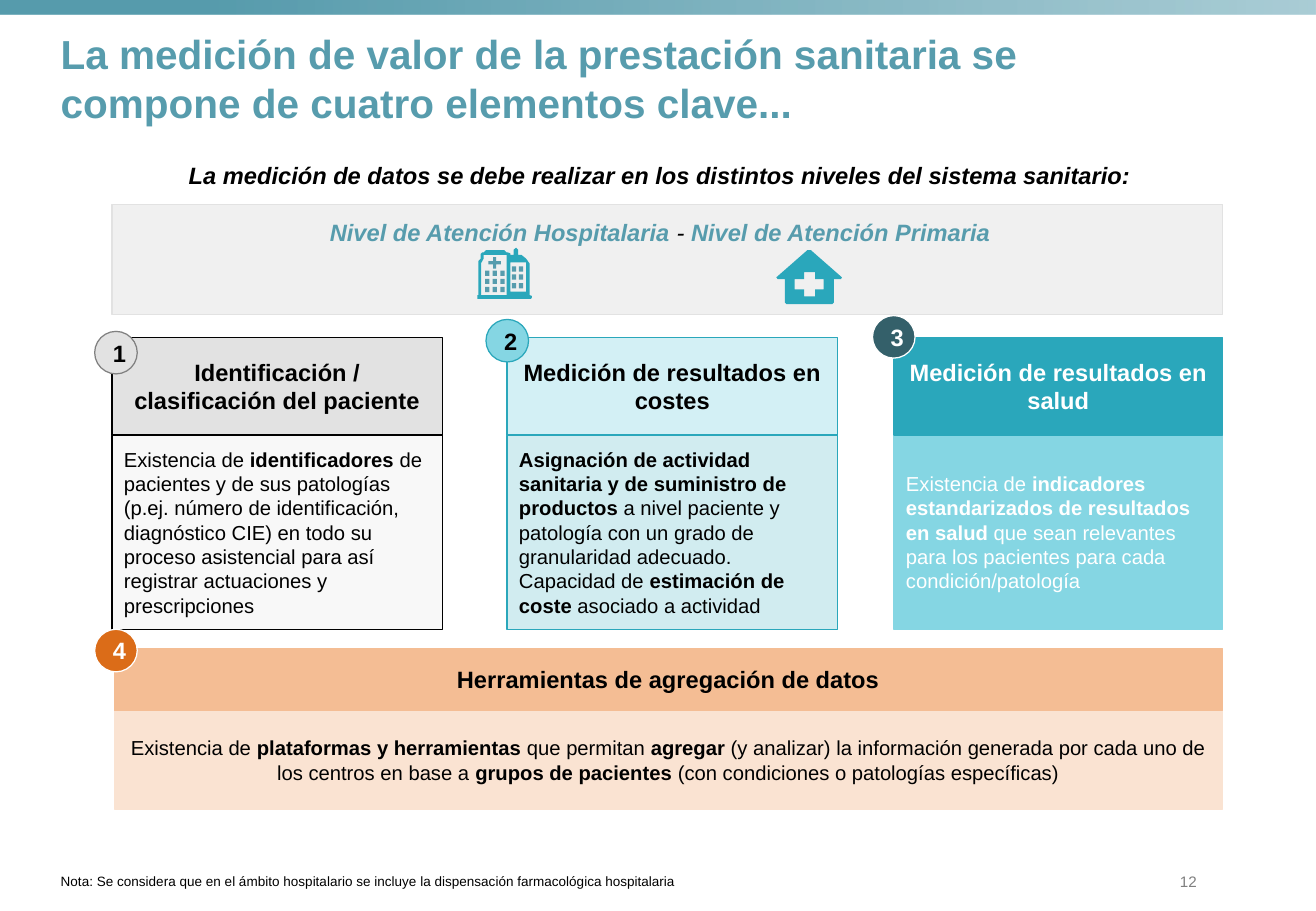
from lxml import etree
from pptx import Presentation
from pptx import util as u
from pptx.dml.color import RGBColor
from pptx.enum import shapes, text
from pptx.oxml.ns import qn

# Content: text between asterisks is bold
TITLE = "La medición de valor de la prestación sanitaria se compone de cuatro elementos clave..."
INTRO = "La medición de datos se debe realizar en los distintos niveles del sistema sanitario:"
LEVELS = ("Nivel de Atención Hospitalaria", " - ", "Nivel de Atención Primaria")
NOTE = "Nota: Se considera que en el ámbito hospitalario se incluye la dispensación farmacológica hospitalaria"
PAGE_NUMBER = "12"

BLACK, WHITE, GREY = "000000", "FFFFFF", "E2E2E2"
SLATE, TEAL, AQUA = "579CAD", "2AA7BB", "85D6E3"
LEFT, CENTER, RIGHT = text.PP_ALIGN.LEFT, text.PP_ALIGN.CENTER, text.PP_ALIGN.RIGHT
TOP, MIDDLE, BOTTOM = text.MSO_ANCHOR.TOP, text.MSO_ANCHOR.MIDDLE, text.MSO_ANCHOR.BOTTOM
RECT, CIRCLE = shapes.MSO_SHAPE.RECTANGLE, shapes.MSO_SHAPE.FLOWCHART_CONNECTOR

# Each card: place is left, top, width, head height, body height in cm;
# head and badge are fill, line, ink; body is fill, line, ink, opacity
CARDS = [
    dict(title="Identificación / clasificación del paciente",
         detail="Existencia de *identificadores* de pacientes y de sus patologías (p.ej. número de "
                "identificación, diagnóstico CIE) en todo su proceso asistencial para así registrar "
                "actuaciones y prescripciones",
         place=(2.34, 7.06, 6.91, 2.04, 4.06), align=LEFT, head=(GREY, BLACK, BLACK),
         body=(GREY, BLACK, BLACK, 21), badge=(GREY, "808080", BLACK), badge_at=(1.98, 6.93)),
    dict(title="Medición de resultados en costes",
         detail="*Asignación de actividad sanitaria y de suministro de productos *a nivel paciente y "
                "patología con un grado de granularidad adecuado. Capacidad de *estimación de coste *"
                "asociado a actividad",
         place=(10.6, 7.06, 6.91, 2.04, 4.06), align=LEFT, head=("D3F0F5", TEAL, BLACK),
         body=(TEAL, TEAL, BLACK, 21), badge=(AQUA, TEAL, BLACK), badge_at=(10.16, 6.68)),
    dict(title="Medición de resultados en salud",
         detail="Existencia de *indicadores estandarizados de resultados en salud* que sean relevantes "
                "para los pacientes para cada condición/patología",
         place=(18.69, 7.06, 6.87, 2.04, 4.06), align=LEFT, head=(TEAL, TEAL, WHITE),
         body=(AQUA, AQUA, WHITE, 100), badge=("34606A", WHITE, WHITE), badge_at=(18.24, 6.6)),
    dict(title="Herramientas de agregación de datos",
         detail="Existencia de *plataformas y herramientas* que permitan* agregar *(y analizar) la "
                "información generada por cada uno de los centros en base a *grupos de pacientes *"
                "(con condiciones o patologías específicas)",
         place=(2.39, 13.56, 23.16, 1.3, 2.06), align=CENTER, head=("F4BD94", "F4BD94", BLACK),
         body=("FAE3D2", "FAE3D2", BLACK, 100), badge=("DB6C18", WHITE, WHITE), badge_at=(1.98, 13.16)),
]

# Icons, in hundredths of a cm
HOUSE = [(1760, 580), (1695, 523), (1688, 523), (1623, 580), (1626, 584), (1641, 584), (1641, 633),
         (1644, 636), (1740, 636), (1743, 633), (1743, 584), (1758, 584)]
HOSPITAL = [(1112, 619), (1107, 617), (1107, 551), (1100, 541), (1090, 533), (1083, 533), (1083, 522),
            (1079, 518), (1074, 522), (1074, 533), (1067, 533), (1067, 530), (1062, 528), (1059, 528),
            (1054, 523), (1016, 523), (1011, 528), (1008, 528), (1005, 531), (1005, 541), (1000, 546),
            (1000, 617), (998, 617), (998, 625), (1110, 625), (1112, 622)]
LEFT_WING = [(1059, 617), (1006, 617), (1006, 550), (1011, 541), (1011, 533), (1059, 533)]
RIGHT_WING = [(1067, 549), (1100, 549), (1100, 610), (1067, 610)]
WINDOWS = [((1014, 1030, 1046), (566, 583, 600)), ((1070, 1085), (557, 574, 592))]

deck = Presentation()
deck.slide_width, deck.slide_height = u.Cm(27.51), u.Cm(19.05)
page = deck.slides.add_slide(deck.slide_layouts[6])


def color(value):
    return RGBColor.from_string(value)


def fade(node, percent):
    etree.SubElement(node, qn("a:alpha")).set("val", str(percent * 1000))


def paint(shape, fill, line=None, opacity=100):
    shape.shadow.inherit = False
    shape.fill.solid()
    shape.fill.fore_color.rgb = color(fill)
    if opacity < 100:
        fade(shape._element.spPr.find(qn("a:solidFill")).find(qn("a:srgbClr")), opacity)
    if line:
        shape.line.color.rgb = color(line)
        shape.line.width = u.Pt(0.75)
    else:
        shape.line.fill.background()


def add_box(kind, place, *colors):
    box = page.shapes.add_shape(kind, *map(u.Cm, place))
    paint(box, *colors)
    return box


def add_textbox(place):
    return page.shapes.add_textbox(*map(u.Cm, place))


def set_frame(box, anchor, inset_x, inset_y, wrap=True):
    frame_format = dict(word_wrap=wrap, vertical_anchor=anchor,
                        margin_left=u.Cm(inset_x), margin_right=u.Cm(inset_x),
                        margin_top=u.Cm(inset_y), margin_bottom=u.Cm(inset_y))
    for name, value in frame_format.items():
        setattr(box.text_frame, name, value)
    return box.text_frame.paragraphs[0]


def write(para, words, size, ink, align=LEFT, **style):
    para.alignment = align
    span = para.add_run()
    span.text = words
    span.font.color.rgb = color(ink)
    for name, value in dict(name="Arial", size=u.Pt(size), **style).items():
        setattr(span.font, name, value)


def add_outline(fill, *contours):
    first, *holes = contours
    builder = page.shapes.build_freeform(*first[0], scale=u.Cm(0.01))
    builder.add_line_segments(first[1:])
    for hole in holes:
        builder.move_to(*hole[0])
        builder.add_line_segments(hole[1:])
    paint(builder.convert_to_shape(), fill)


def cross(xs, ys):
    x0, x1, x2, x3 = xs
    y0, y1, y2, y3 = ys
    return [(x1, y0), (x2, y0), (x2, y1), (x3, y1), (x3, y2), (x2, y2),
            (x2, y3), (x1, y3), (x1, y2), (x0, y2), (x0, y1), (x1, y1)]


# Top band
band = add_box(RECT, (0, 0, 27.51, 0.31), SLATE)
band.fill.gradient()
band.fill.gradient_angle = 0
for stop, position in zip(band.fill.gradient_stops, (0.15, 1)):
    stop.position = position
    stop.color.rgb = color(SLATE)
fade(band._element.spPr.findall(".//" + qn("a:srgbClr"))[-1], 50)

# Title, note and page number
para = set_frame(add_textbox((1.27, 0.46, 22.56, 2.31)), BOTTOM, 0, 0.13)
write(para, TITLE, 24, SLATE, bold=True)
para = set_frame(add_textbox((1.27, 17.68, 24.99, 0.91)), BOTTOM, 0, 0)
para.line_spacing = 0.9
write(para, NOTE, 8, BLACK)
para = set_frame(add_textbox((24.49, 18.24, 0.53, 0.36)), TOP, 0, 0, wrap=False)
write(para, PAGE_NUMBER, 9, "808080", RIGHT)

# Care levels
add_box(RECT, (2.34, 4.27, 23.22, 2.31), GREY, GREY, 51)
levels_box = add_textbox((2.74, 3.12, 22.12, 2.31))
write(set_frame(levels_box, TOP, 0.25, 0.25), INTRO, 14, BLACK, CENTER, bold=True, italic=True)
para = levels_box.text_frame.add_paragraph()
para.space_before = u.Pt(17)
for words, ink, bold in zip(LEVELS, (SLATE, BLACK, SLATE), (True, False, True)):
    write(para, words, 14, ink, CENTER, bold=bold, italic=True)

# Icons
add_outline(TEAL, HOUSE, cross((1661, 1681, 1704, 1722), (569, 584, 605, 620)))
add_outline(TEAL, HOSPITAL, LEFT_WING, RIGHT_WING)
add_outline(SLATE, cross((1021, 1031, 1037, 1047), (538, 546, 553, 562)))
for columns, rows in WINDOWS:
    for x in columns:
        for y in rows:
            add_box(RECT, (x / 100, y / 100, 0.09, 0.11), SLATE)

# Cards with numbered badges
for number, card in enumerate(CARDS, 1):
    left, top, width, head_height, body_height = card["place"]
    fill, line, ink, opacity = card["body"]
    body = add_box(RECT, (left, top + head_height, width, body_height), fill, line, opacity)
    para = set_frame(body, MIDDLE, 0.25, 0.25)
    for index, words in enumerate(card["detail"].split("*")):
        if words:
            write(para, words, 12, ink, card["align"], bold=index % 2 == 1)

    fill, line, ink = card["head"]
    head = add_box(RECT, (left, top, width, head_height), fill, line)
    write(set_frame(head, MIDDLE, 0.2, 0.2), card["title"], 14, ink, CENTER, bold=True)

    fill, line, ink = card["badge"]
    badge = add_box(CIRCLE, (*card["badge_at"], 0.89, 0.89), fill, line)
    write(set_frame(badge, MIDDLE, 0.25, 0.25), str(number), 14, ink, CENTER, bold=True)

deck.save("out.pptx")
